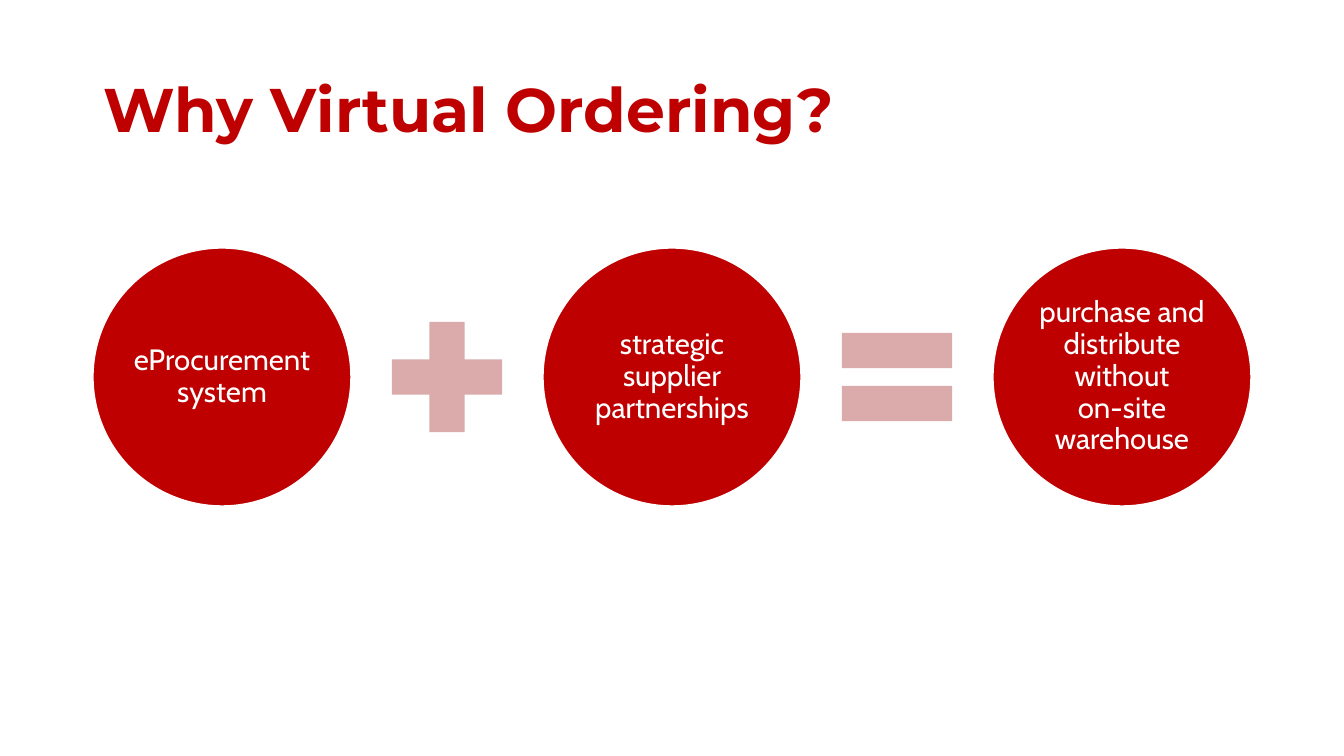
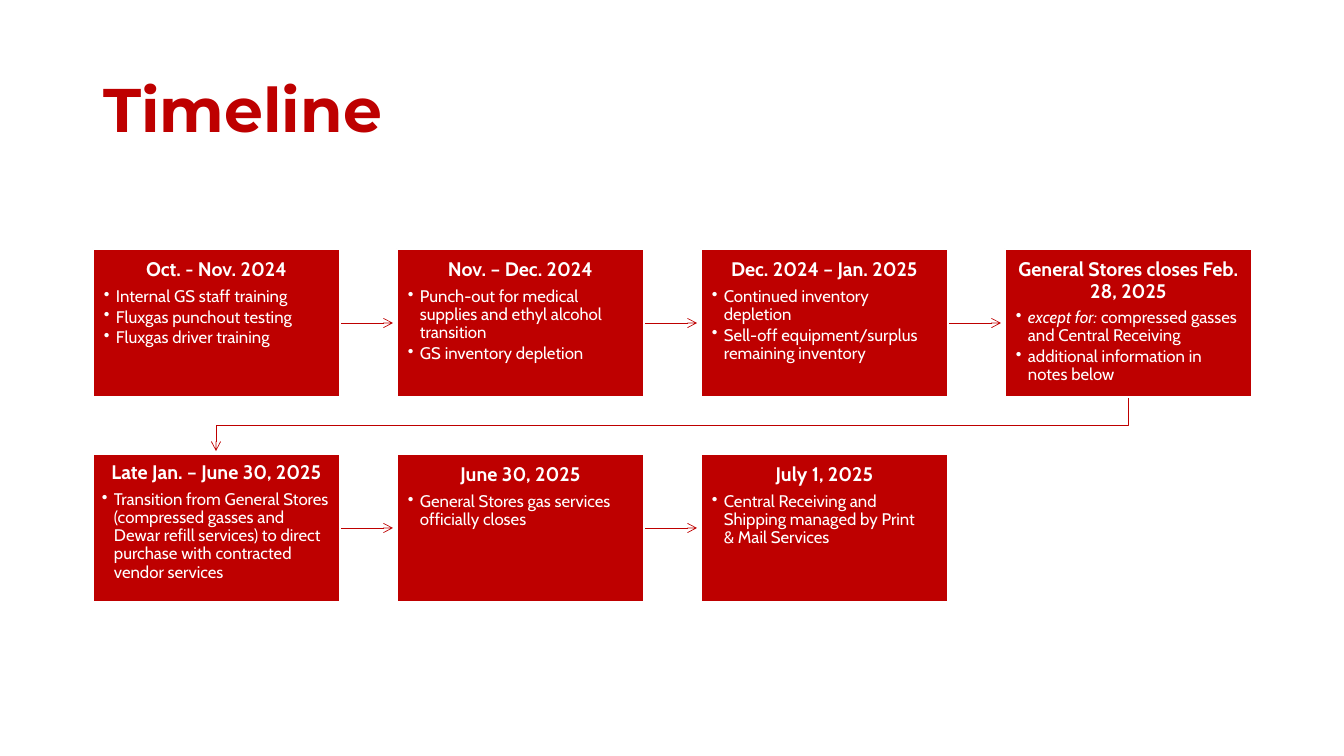
from lxml.etree import SubElement
from pptx import Presentation
from pptx.dml.color import RGBColor
from pptx.enum.shapes import MSO_CONNECTOR, MSO_SHAPE
from pptx.enum.text import MSO_ANCHOR, MSO_AUTO_SIZE, PP_ALIGN
from pptx.oxml.ns import qn
from pptx.util import Pt

PX = 12192000 / 1344
COLORS = {name: RGBColor.from_string(value) for name, value in {
    "red": "BE0000", "pink": "DBABAB", "white": "FFFFFF"}.items()}
LEFT = 93


def write(paragraph, text, size, color="white", font="Cabin", bold=False):
    """Add text as runs: *starred* parts are italic, newlines are line breaks."""
    paragraph.line_spacing = 0.9
    for part, piece in enumerate(text.split("*")):
        for row, line in enumerate(piece.split("\n")):
            if row:
                paragraph.add_line_break()
            if line:
                run = paragraph.add_run()
                run.text = line
                run.font.name, run.font.size = font, Pt(size)
                run.font.bold, run.font.italic = bold, part % 2 == 1
                run.font.color.rgb = COLORS[color]


def add_block(slide, preset, box, fill="red", outlined=True, inset=3):
    """Add a filled preset shape; box is left, top, width, height in px."""
    block = slide.shapes.add_shape(preset, *(round(n * PX) for n in box))
    block.shadow.inherit = False
    block.fill.solid()
    block.fill.fore_color.rgb = COLORS[fill]
    if outlined:
        block.line.color.rgb = COLORS["white"]
        block.line.width = Pt(1)
    else:
        block.line.fill.background()
    frame = block.text_frame
    frame.word_wrap = True
    frame.margin_left = frame.margin_right = round(inset * PX)
    frame.margin_top = frame.margin_bottom = round(inset * PX)
    return frame


prs = Presentation()
prs.slide_width, prs.slide_height = round(1344 * PX), round(756 * PX)

slides = []
for heading in ("Why Virtual Ordering?", "Timeline"):
    slide = prs.slides.add_slide(prs.slide_layouts[5])
    title = slide.shapes.title
    title.left, title.top = round(LEFT * PX), round(40 * PX)
    title.width, title.height = round(1159 * PX), round(146 * PX)
    title.text_frame.auto_size = MSO_AUTO_SIZE.NONE
    title.text_frame.vertical_anchor = MSO_ANCHOR.MIDDLE
    title_line = title.text_frame.paragraphs[0]
    title_line.alignment = PP_ALIGN.LEFT
    write(title_line, heading, 44, "red", "Montserrat", True)
    slides.append(slide)
why, timeline = slides

# Equation of circles and signs
CIRCLE, SIGN, SIGN_GAP, CIRCLE_TOP = 258, 150, 21, 248
terms = [
    ("eProcurement system", MSO_SHAPE.MATH_PLUS),
    ("strategic supplier partnerships", MSO_SHAPE.MATH_EQUAL),
    ("purchase and distribute without\non-site warehouse", None),
]
for index, (term, sign) in enumerate(terms):
    x = LEFT + index * (CIRCLE + SIGN + 2 * SIGN_GAP)
    frame = add_block(why, MSO_SHAPE.OVAL, (x, CIRCLE_TOP, CIRCLE, CIRCLE))
    frame.vertical_anchor = MSO_ANCHOR.MIDDLE
    frame.paragraphs[0].alignment = PP_ALIGN.CENTER
    write(frame.paragraphs[0], term, 21)
    if sign:
        sign_top = CIRCLE_TOP + (CIRCLE - SIGN) // 2
        add_block(why, sign, (x + CIRCLE + SIGN_GAP, sign_top, SIGN, SIGN),
                  "pink", outlined=False)

# Timeline steps, four to a row
STEP_W, STEP_H, PITCH_X, PITCH_Y, STEP_TOP, PER_ROW = 247, 148, 304, 205, 249, 4
BULLET_INDENT = round(12 * PX)
steps = [
    ("Oct. - Nov. 2024", 11, ["Internal GS staff training",
                              "Fluxgas punchout testing",
                              "Fluxgas driver training"]),
    ("Nov. – Dec. 2024", 11, [
        "Punch-out for medical supplies and ethyl alcohol transition",
        "GS inventory depletion"]),
    ("Dec. 2024 – Jan. 2025", 11, [
        "Continued inventory depletion",
        "Sell-off equipment/surplus remaining inventory"]),
    ("General Stores closes Feb. 28, 2025", 11, [
        "*except for:* compressed gasses and Central Receiving",
        "additional information in notes below"]),
    ("Late Jan. – June 30, 2025", 9, [
        "Transition from General Stores (compressed gasses and Dewar refill "
        "services) to direct purchase with contracted vendor services"]),
    ("June 30, 2025", 11, ["General Stores gas services officially closes"]),
    ("July 1, 2025", 11, [
        "Central Receiving and Shipping managed by Print\n& Mail Services"]),
]
for index, (period, inset, tasks) in enumerate(steps):
    row, column = divmod(index, PER_ROW)
    x, y = LEFT + column * PITCH_X, STEP_TOP + row * PITCH_Y

    if index < len(steps) - 1:
        if column < PER_ROW - 1:
            middle = round((y + STEP_H // 2) * PX)
            arrow = timeline.shapes.add_connector(
                MSO_CONNECTOR.STRAIGHT, round((x + STEP_W) * PX), middle,
                round((x + PITCH_X - 4) * PX), middle)
        else:
            start, end = x + STEP_W // 2, LEFT + STEP_W // 2
            turn = y + (STEP_H + PITCH_Y) // 2
            route = timeline.shapes.build_freeform(start, y + STEP_H, scale=PX)
            route.add_line_segments(
                [(start, turn), (end, turn), (end, y + PITCH_Y - 3)], close=False)
            arrow = route.convert_to_shape()
            arrow.fill.background()
        arrow.line.color.rgb = COLORS["red"]
        arrow.line.width = Pt(0.5)
        SubElement(arrow.line._get_or_add_ln(), qn("a:tailEnd"), type="arrow")
        SubElement(arrow._element.spPr, qn("a:effectLst"))

    frame = add_block(timeline, MSO_SHAPE.RECTANGLE, (x, y, STEP_W, STEP_H),
                      inset=inset)
    frame.vertical_anchor = MSO_ANCHOR.TOP
    date = frame.paragraphs[0]
    date.alignment = PP_ALIGN.CENTER
    date.space_after = Pt(4.9)
    write(date, period, 14, bold=True)
    for task in tasks:
        item = frame.add_paragraph()
        props = item._p.get_or_add_pPr()
        props.set("marL", str(BULLET_INDENT))
        props.set("indent", str(-BULLET_INDENT))
        SubElement(props, qn("a:buChar"), char="•")
        item.alignment = PP_ALIGN.LEFT
        item.space_after = Pt(1.8)
        write(item, task, 12)

prs.save("out.pptx")
